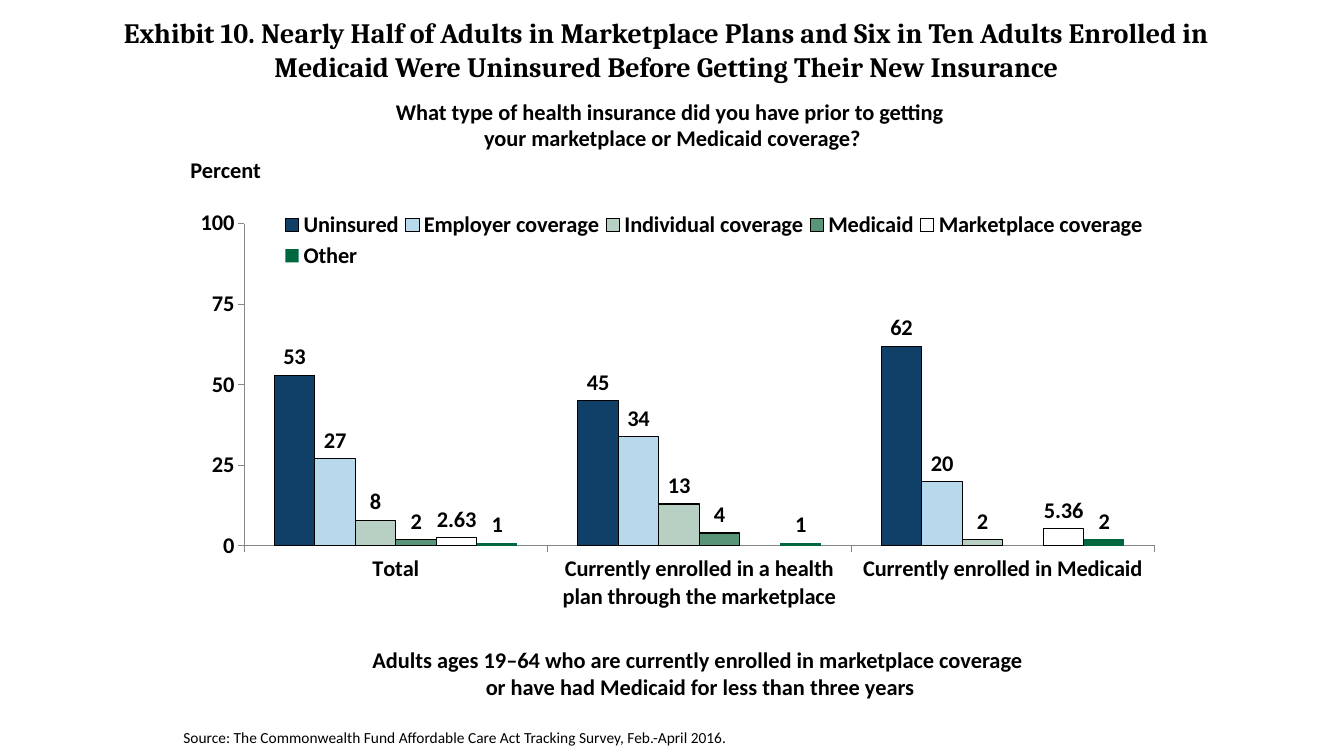
from lxml import etree
from pptx import Presentation
from pptx.chart.data import CategoryChartData
from pptx.dml.color import RGBColor
from pptx.enum import chart as ch, text
from pptx.util import Inches, Pt

BLACK = RGBColor(0x00, 0x00, 0x00)
GRAY = RGBColor(0x86, 0x86, 0x86)
NAVY = RGBColor(0x10, 0x40, 0x68)
SKY = RGBColor(0xB8, 0xD9, 0xEC)
SAGE = RGBColor(0xB8, 0xD0, 0xC4)
GREEN = RGBColor(0x58, 0x94, 0x78)
WHITE = RGBColor(0xFF, 0xFF, 0xFF)
DARK_GREEN = RGBColor(0x00, 0x67, 0x3F)
CENTER, LEFT = text.PP_ALIGN.CENTER, text.PP_ALIGN.LEFT


def set_font(font, size, bold=True, name="Calibri"):
    for key, value in dict(size=Pt(size), bold=bold, name=name).items():
        setattr(font, key, value)
    font.color.rgb = BLACK


def set_layout(parent, after, target, x, y, width, height):
    """Place a chart part by fractions of the chart area."""
    for old in parent.xpath("./c:layout"):
        parent.remove(old)
    namespace = "{http://schemas.openxmlformats.org/drawingml/2006/chart}"
    layout = etree.Element(namespace + "layout")
    manual = etree.SubElement(layout, namespace + "manualLayout")
    values = dict(xMode="edge", yMode="edge", x=x, y=y, w=width, h=height)
    if target:
        values = {"layoutTarget": target, **values}
    for key, value in values.items():
        etree.SubElement(manual, namespace + key, val=str(value))
    parent.insert(after, layout)


presentation = Presentation()
presentation.slide_width, presentation.slide_height = Inches(13.33), Inches(7.5)
slide = presentation.slides.add_slide(presentation.slide_layouts[5])

# Title
title = slide.shapes.title
frame = dict(left=0.92, top=0.09, width=11.38, height=0.8)
for key, value in frame.items():
    setattr(title, key, Inches(value))
title.text_frame.text = (
    "Exhibit 10. Nearly Half of Adults in Marketplace Plans and Six in Ten Adults "
    "Enrolled in Medicaid Were Uninsured Before Getting Their New Insurance")
title.text_frame.vertical_anchor = text.MSO_ANCHOR.MIDDLE
title.text_frame.paragraphs[0].alignment = CENTER
set_font(title.text_frame.paragraphs[0].runs[0].font, 20, name="Cambria")

# Question, axis caption, population and source
captions = [
    ("What type of health insurance did you have prior to getting \n"
     "your marketplace or Medicaid coverage?", (1.67, 0.92, 10, 0.64), 16, True, CENTER),
    ("Percent", (1.79, 1.5, 1.92, 0.37), 16, True, LEFT),
    ("Adults ages 19–64 who are currently enrolled in marketplace coverage \n"
     "or have had Medicaid for less than three years",
     (3.53, 6.36, 6.83, 0.64), 16, True, CENTER),
    ("Source: The Commonwealth Fund Affordable Care Act Tracking Survey, "
     "Feb.-April 2016.", (1.72, 7.17, 9.78, 0.29), 11, False, LEFT),
]
for words, box, size, bold, alignment in captions:
    shape = slide.shapes.add_textbox(*map(Inches, box))
    shape.text_frame.word_wrap = True
    paragraph = shape.text_frame.paragraphs[0]
    paragraph.text = words.replace("\n", "\v")
    paragraph.alignment = alignment
    for run in paragraph.runs:
        set_font(run.font, size, bold)

# Chart data
series_rows = [
    ("Uninsured", (53, 45, 62), NAVY),
    ("Employer coverage", (27, 34, 20), SKY),
    ("Individual coverage", (8, 13, 2), SAGE),
    ("Medicaid", (2, 4, None), GREEN),
    ("Marketplace coverage", (2.63, None, 5.36), WHITE),
    ("Other", (1, 1, 2), DARK_GREEN),
]
data = CategoryChartData()
data.categories = [
    "Total",
    "Currently enrolled in a health plan through the marketplace",
    "Currently enrolled in Medicaid",
]
for name, values, color in series_rows:
    data.add_series(name, values)
chart = slide.shapes.add_chart(
    ch.XL_CHART_TYPE.COLUMN_CLUSTERED,
    Inches(1.79), Inches(1.98), Inches(9.71), Inches(4.27), data).chart
chart.has_title = False
set_font(chart.font, 16)

# Columns and their labels
plot = chart.plots[0]
plot.gap_width, plot.overlap, plot.vary_by_categories = 149, 0, False
for series, (name, values, color) in zip(plot.series, series_rows):
    series.invert_if_negative = False
    series.format.fill.solid()
    series.format.fill.fore_color.rgb = color
    if name == "Other":
        series.format.line.fill.background()
    else:
        series.format.line.color.rgb = BLACK
        series.format.line.width = Pt(0.75)
    labels = series.data_labels
    labels.show_value = True
    labels.position = ch.XL_LABEL_POSITION.OUTSIDE_END
    labels.number_format = "General" if name == "Marketplace coverage" else "0"
    labels.number_format_is_linked = False
    set_font(labels.font, 16)

# Axes
value_axis = chart.value_axis
scale = dict(minimum_scale=0, maximum_scale=100, major_unit=25, has_major_gridlines=False)
for key, value in scale.items():
    setattr(value_axis, key, value)
value_axis.tick_labels.number_format = "0"
value_axis.tick_labels.number_format_is_linked = False
for axis in (value_axis, chart.category_axis):
    axis.major_tick_mark = ch.XL_TICK_MARK.OUTSIDE
    axis.format.line.color.rgb = GRAY
    axis.format.line.width = Pt(0.75)
    set_font(axis.tick_labels.font, 16)

# Legend over the top of the plot area
chart.has_legend = True
chart.legend.position = ch.XL_LEGEND_POSITION.TOP
chart.legend.include_in_layout = False
set_font(chart.legend.font, 16)
chart_space = chart.element if hasattr(chart, "element") else chart._chartSpace
set_layout(chart_space.xpath(".//c:legend")[0], 1, None, 0.1, 0.02, 0.89, 0.15)
set_layout(chart_space.xpath(".//c:plotArea")[0], 0, "inner", 0.065, 0.056, 0.93, 0.749)

presentation.save("out.pptx")
